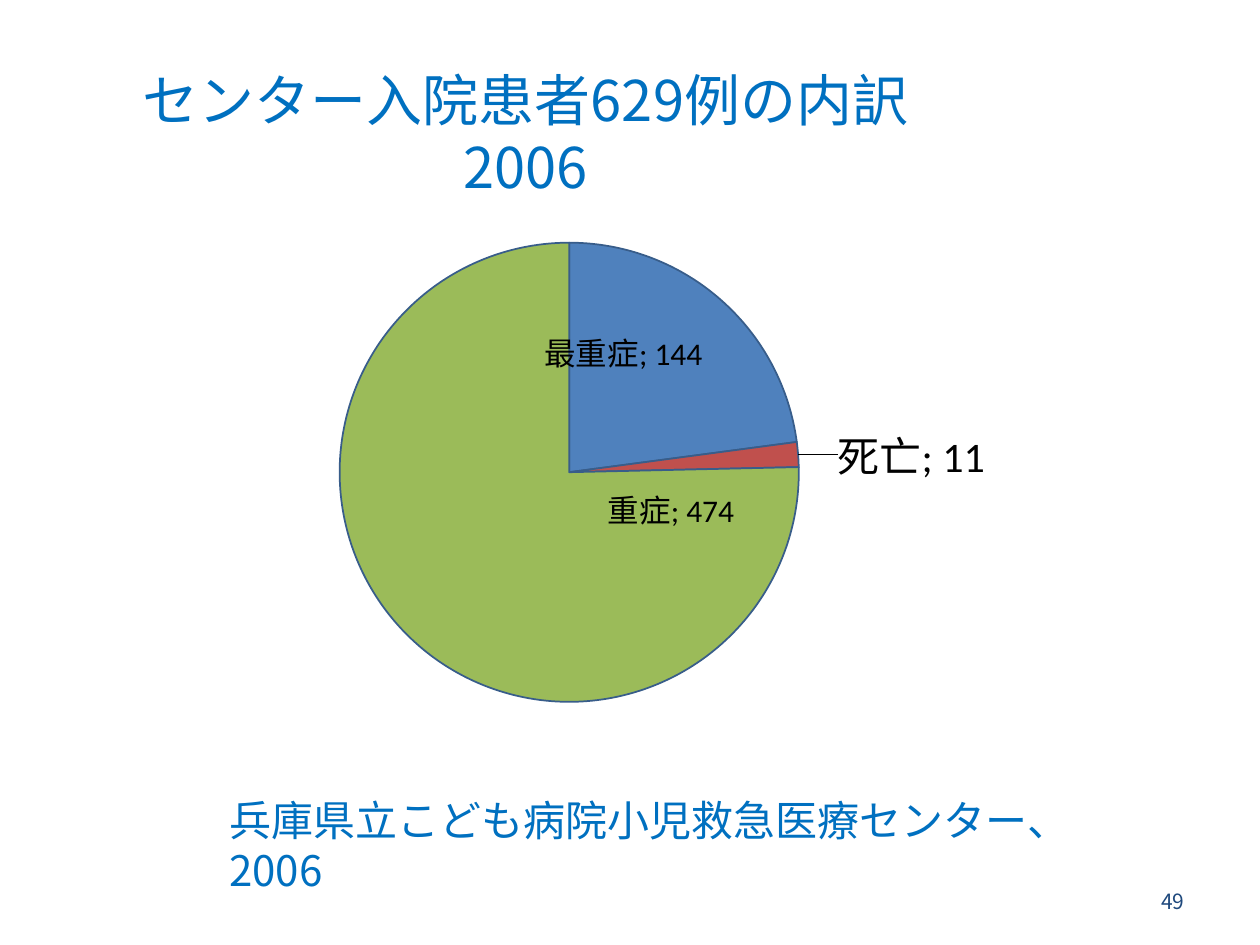
from dataclasses import dataclass

from lxml.etree import SubElement
from pptx import Presentation
from pptx.chart.data import CategoryChartData
from pptx.dml.color import RGBColor
from pptx.enum.chart import XL_CHART_TYPE as Chart, XL_LABEL_POSITION as Pos
from pptx.enum.text import MSO_ANCHOR as Anchor, MSO_AUTO_SIZE as Fit, PP_ALIGN as Align
from pptx.oxml import parse_xml
from pptx.oxml.ns import nsdecls, qn
from pptx.util import Pt

PX = 914400 / 126
JP = "Noto Sans CJK JP"
BLUE = "0070C0"


@dataclass
class Box:
    x: int
    y: int
    w: int
    h: int


@dataclass
class Severity:
    name: str
    cases: int
    fill: str
    size: int
    pos: Pos
    dx: float
    dy: float


@dataclass
class Note:
    text: str
    box: Box
    size: int
    color: str
    align: Align
    anchor: Anchor


SEVERITIES = [
    Severity("最重症", 144, "4F81BD", 18, Pos.CENTER, -0.02, -0.06),
    Severity("死亡", 11, "C0504D", 24, Pos.OUTSIDE_END, 0.03, 0),
    Severity("重症", 474, "9BBB59", 18, Pos.CENTER, 0.17, -0.08),
]
NOTES = [
    Note("49", Box(903, 876, 294, 50), 12, "1F497D", Align.RIGHT, Anchor.MIDDLE),
    Note("兵庫県立こども病院小児救急医療センター、2006", Box(217, 788, 916, 64),
         24, BLUE, Align.LEFT, Anchor.TOP),
]


def px(n: int) -> int:
    return round(n * PX)


def rgb(color: str) -> RGBColor:
    return RGBColor.from_string(color)


def place(sp, box: Box) -> None:
    sp.left, sp.top, sp.width, sp.height = map(px, (box.x, box.y, box.w, box.h))


def add_run(p, text: str, size: int, color: str) -> None:
    r = p.add_run()
    r.text = text
    r.font.size = Pt(size)
    r.font.name = JP
    r.font.color.rgb = rgb(color)
    SubElement(r.font._element, qn("a:ea")).set("typeface", JP)


def set_title(s) -> None:
    sp = s.shapes.title
    place(sp, Box(78, 29, 1077, 207))
    tf = sp.text_frame
    tf.auto_size = Fit.NONE
    tf.vertical_anchor = Anchor.MIDDLE
    first, second = tf.paragraphs[0], tf.add_paragraph()
    for p, text in ((first, "センター入院患者629例の内訳"), (second, "2006")):
        p.alignment = Align.CENTER
        p.space_before = Pt(0)
        add_run(p, text, 32, BLUE)
    first._p.get_or_add_pPr().set("marR", str(px(182)))


def add_note(s, note: Note) -> None:
    b = note.box
    tf = s.shapes.add_textbox(px(b.x), px(b.y), px(b.w), px(b.h)).text_frame
    tf.word_wrap = True
    tf.vertical_anchor = note.anchor
    p = tf.paragraphs[0]
    p.alignment = note.align
    add_run(p, note.text, note.size, note.color)


def manual_layout(**values):
    items = "".join(f'<c:{k} val="{v}"/>' for k, v in values.items())
    return parse_xml(f'<c:layout {nsdecls("c")}><c:manualLayout>{items}'
                     "</c:manualLayout></c:layout>")


def format_slice(point, item: Severity) -> None:
    point.format.fill.solid()
    point.format.fill.fore_color.rgb = rgb(item.fill)
    point.format.line.color.rgb = rgb("385D8A")
    point.format.line.width = Pt(1)
    label = point.data_label
    label.font.size = Pt(item.size)
    label.font.color.rgb = rgb("000000")
    label.position = item.pos
    dlbl = label._dLbl
    dlbl.insert(1, manual_layout(x=item.dx, y=item.dy))
    for tag, val in (("c:showCatName", "1"), ("c:showVal", "1"), ("c:showPercent", "0")):
        dlbl.find(qn(tag)).set("val", val)
    SubElement(dlbl, qn("c:separator")).text = "; "


def add_pie(s, box: Box) -> None:
    data = CategoryChartData()
    data.categories = [item.name for item in SEVERITIES]
    data.add_series("Series 1", [item.cases for item in SEVERITIES])
    chart = s.shapes.add_chart(Chart.PIE, px(box.x), px(box.y), px(box.w), px(box.h), data).chart
    chart.has_legend = False
    chart.has_title = False
    chart.font.size = Pt(18)
    chart.font.name = "Calibri"
    chart.font.color.rgb = rgb("000000")
    area = chart._chartSpace.chart.plotArea
    for old in area.findall(qn("c:layout")):
        area.remove(old)
    area.insert(0, manual_layout(layoutTarget="inner", xMode="edge", yMode="edge",
                                 x=0.02, y=0.1, w=0.84, h=0.81))
    series = chart.plots[0].series[0]
    for i, item in enumerate(SEVERITIES):
        format_slice(series.points[i], item)


def main() -> None:
    prs = Presentation()
    prs.slide_width, prs.slide_height = px(1260), px(945)
    s = prs.slides.add_slide(prs.slide_layouts[5])
    set_title(s)
    add_pie(s, Box(98, 186, 1071, 567))
    for note in NOTES:
        add_note(s, note)
    prs.save("out.pptx")


if __name__ == "__main__":
    main()
